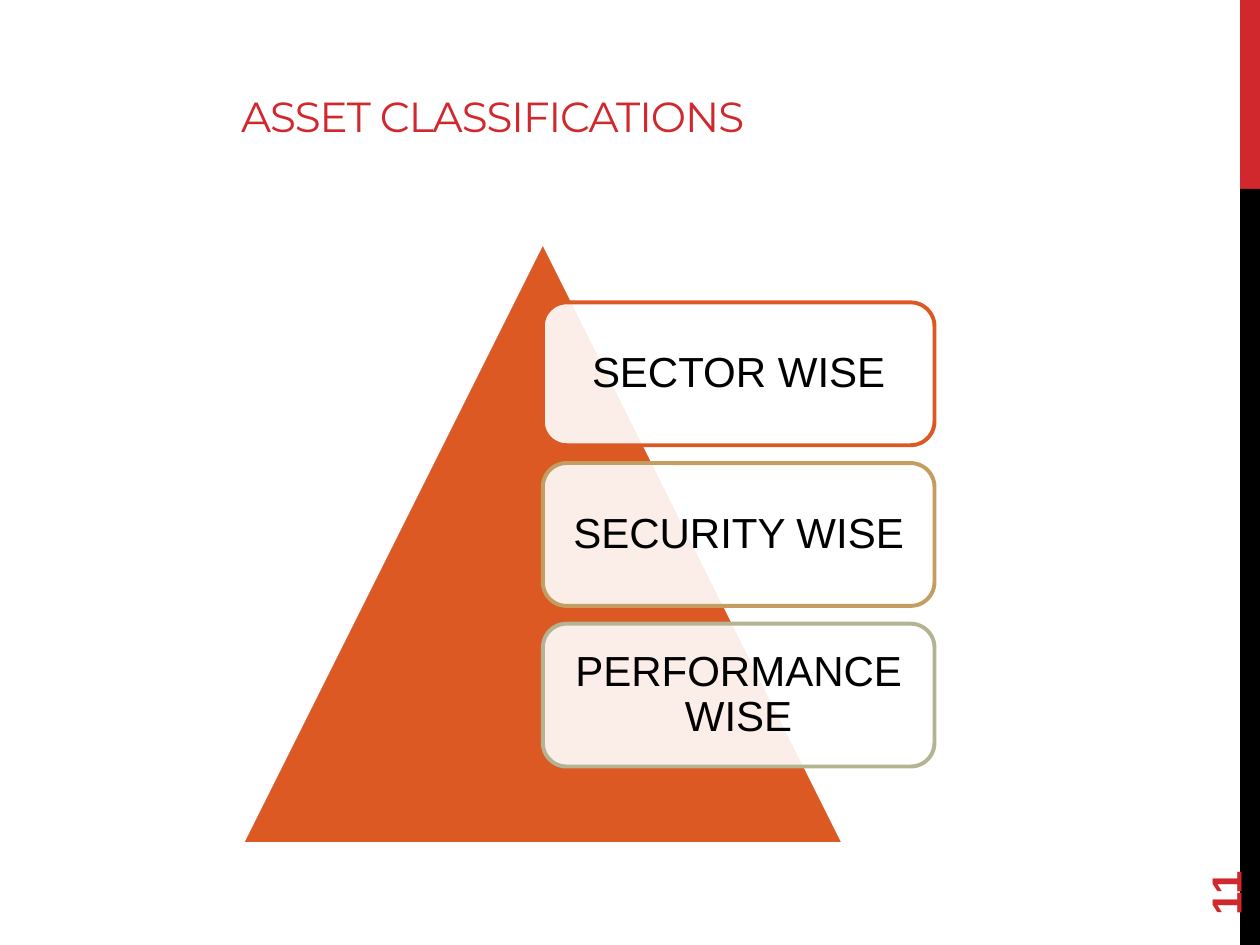
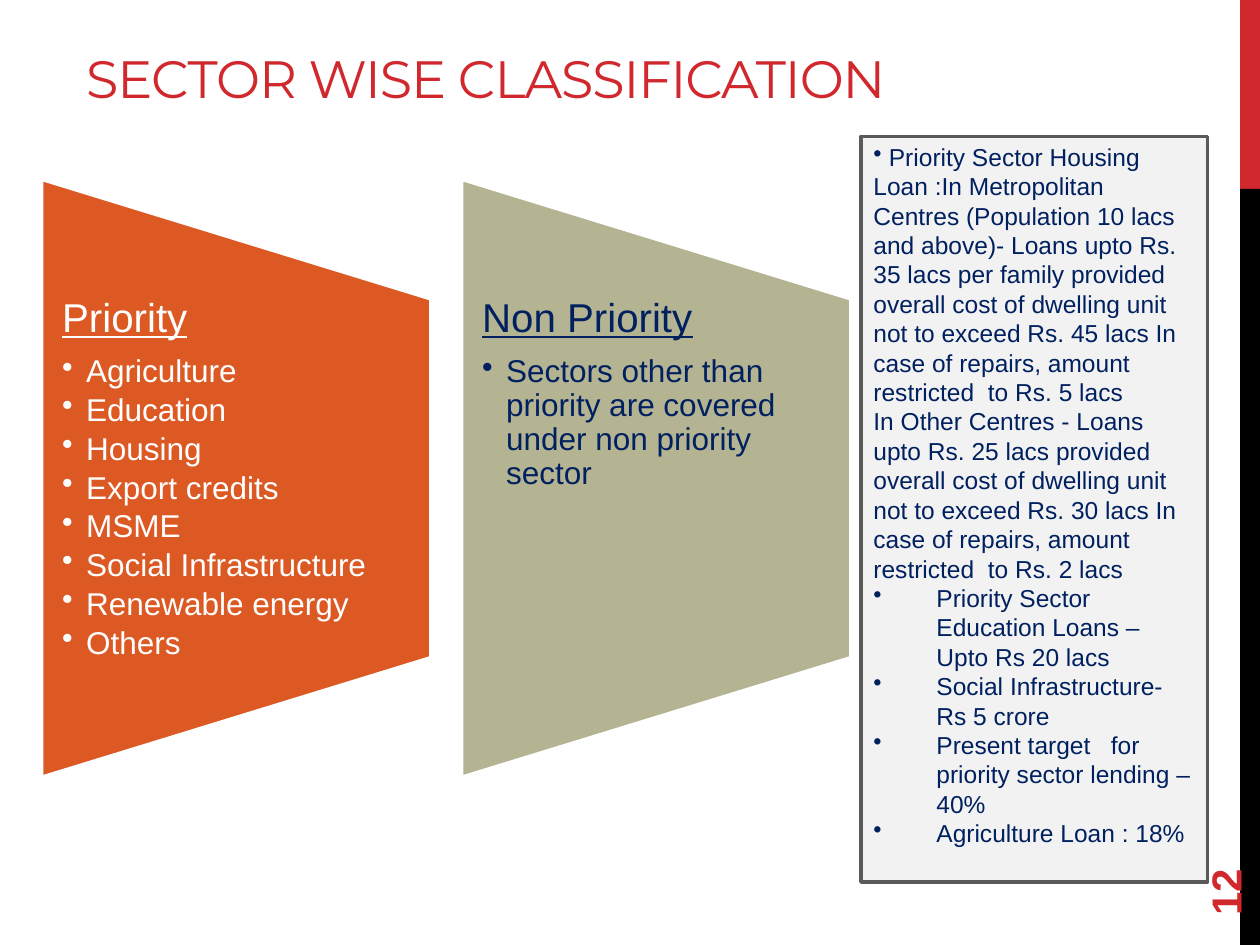
from dataclasses import dataclass

from lxml.etree import SubElement
from pptx import Presentation
from pptx.dml.color import RGBColor
from pptx.enum.shapes import MSO_SHAPE as Preset
from pptx.enum.text import MSO_ANCHOR as Anchor, MSO_AUTO_SIZE as AutoSize, PP_ALIGN as Align
from pptx.oxml.ns import qn
from pptx.util import Inches, Pt

RED = RGBColor(0xD1, 0x28, 0x2E)
BLACK = RGBColor(0x00, 0x00, 0x00)
WHITE = RGBColor(0xFF, 0xFF, 0xFF)
ORANGE = RGBColor(0xDC, 0x59, 0x24)
GOLD = RGBColor(0xC3, 0x9E, 0x60)
SAGE = RGBColor(0xB4, 0xB3, 0x92)
NAVY = RGBColor(0x00, 0x20, 0x60)
PALE = RGBColor(0xF2, 0xF2, 0xF2)
GREY = RGBColor(0x5A, 0x5A, 0x5A)

COLUMNS, ROWS = 60, 45
TITLE_ONLY = 5


@dataclass
class Line:
    text: str
    size: float
    color: RGBColor
    bold: bool = False
    underline: bool = False
    bullet: bool = False
    indent: float = 0
    level: int = 0
    spacing: float = 1
    after: float = 0
    align: Align = Align.LEFT


class Deck:
    title_font = "Montserrat"
    body_font = "Arial"
    outline = Pt(2.25)

    def __init__(self):
        self.presentation = Presentation()
        self.presentation.slide_width = Inches(10)
        self.presentation.slide_height = Inches(7.5)
        self.column = self.presentation.slide_width / COLUMNS
        self.row = self.presentation.slide_height / ROWS
        self.slide = None

    def place(self, left, top, width, height):
        return (round(left * self.column), round(top * self.row),
                round(width * self.column), round(height * self.row))

    def new_slide(self, title, area, size, number, inset=0.1):
        layout = self.presentation.slide_layouts[TITLE_ONLY]
        self.slide = self.presentation.slides.add_slide(layout)
        self.shape(Preset.RECTANGLE, (59.05, 0, 0.95, 9), RED)
        self.shape(Preset.RECTANGLE, (59.05, 9, 0.95, 36), BLACK)
        self.title(title, area, size, inset)
        self.text((54, 38.65, 8.65, 2.4), [Line(number, 24, RED, bold=True)],
                  anchor=Anchor.MIDDLE, rotation=270)

    def title(self, text, area, size, inset):
        shape = self.slide.shapes.title
        shape.left, shape.top, shape.width, shape.height = self.place(*area)
        frame = shape.text_frame
        frame.text = text
        frame.auto_size = AutoSize.NONE
        frame.vertical_anchor = Anchor.BOTTOM
        frame.margin_left = Inches(inset)
        paragraph = frame.paragraphs[0]
        paragraph.alignment = Align.LEFT
        run = paragraph.runs[0]
        run.font.name = self.title_font
        run.font.size = Pt(size)
        run.font.color.rgb = RED
        run._r.get_or_add_rPr().set("spc", "-60")

    def shape(self, preset, area, fill, line=None, rotation=0, opacity=100):
        shape = self.slide.shapes.add_shape(preset, *self.place(*area))
        shape.shadow.inherit = False
        shape.rotation = rotation
        shape.fill.solid()
        shape.fill.fore_color.rgb = fill
        if opacity < 100:
            color = shape._element.spPr.find(qn("a:solidFill"))[0]
            SubElement(color, qn("a:alpha")).set("val", str(opacity * 1000))
        if line is None:
            shape.line.fill.background()
        else:
            shape.line.color.rgb = line
            shape.line.width = self.outline
        return shape

    def text(self, area, lines, anchor=Anchor.TOP, rotation=0, insets=(0.1, 0.05, 0.1, 0.05)):
        box = self.slide.shapes.add_textbox(*self.place(*area))
        box.rotation = rotation
        self.set_lines(box, lines, anchor, insets)

    def set_lines(self, shape, lines, anchor=Anchor.MIDDLE, insets=(0.1, 0.05, 0.1, 0.05)):
        frame = shape.text_frame
        frame.word_wrap = True
        frame.vertical_anchor = anchor
        (frame.margin_left, frame.margin_top,
         frame.margin_right, frame.margin_bottom) = map(Inches, insets)
        for index, line in enumerate(lines):
            paragraph = frame.add_paragraph() if index else frame.paragraphs[0]
            self.style_line(paragraph, line)

    def style_line(self, paragraph, line):
        paragraph.text = line.text
        paragraph.alignment = line.align
        paragraph.level = line.level
        paragraph.line_spacing = line.spacing
        paragraph.space_after = Pt(line.after)
        font = paragraph.runs[0].font
        font.name = self.body_font
        font.size = Pt(line.size)
        font.bold = line.bold
        font.underline = line.underline
        font.color.rgb = line.color
        properties = paragraph._p.get_or_add_pPr()
        properties.set("marL", str(Inches(line.indent)))
        properties.set("indent", str(-Inches(line.indent)))
        if line.bullet:
            SubElement(properties, qn("a:buChar")).set("char", "•")


def asset_classifications(deck):
    deck.new_slide("ASSET CLASSIFICATIONS", (8, 1, 33, 6), 24, "11", inset=0.58)
    deck.shape(Preset.ISOSCELES_TRIANGLE, (11.5, 11.5, 28.7, 28.7), ORANGE, WHITE)
    classes = [("SECTOR WISE", ORANGE), ("SECURITY WISE", GOLD), ("PERFORMANCE WISE", SAGE)]
    for index, (name, color) in enumerate(classes):
        card = deck.shape(Preset.ROUNDED_RECTANGLE, (25.85, 14.4 + 7.65 * index, 18.65, 6.8),
                          WHITE, color, opacity=90)
        deck.set_lines(card, [Line(name, 24, BLACK, spacing=0.9, align=Align.CENTER)],
                       insets=(0.1, 0.1, 0.1, 0.1))


def sector_wise_classification(deck):
    deck.new_slide("SECTOR WISE CLASSIFICATION", (3.5, 1, 45, 4.5), 30, "12")
    sectors = [
        ("Priority", ORANGE, WHITE,
         ["Agriculture", "Education", "Housing", "Export credits", "MSME",
          "Social Infrastructure", "Renewable energy", "Others"]),
        ("Non Priority", SAGE, NAVY,
         ["Sectors other than priority are covered under non priority sector"]),
    ]
    for index, (heading, fill, color, members) in enumerate(sectors):
        shift = 20 * index
        deck.shape(Preset.FLOWCHART_MANUAL_OPERATION, (shift - 3, 13.5, 28.5, 18.55),
                   fill, WHITE, rotation=270)
        lines = [Line(heading, 23, color, underline=True, spacing=0.9, after=8)]
        lines += [Line(member, 18, color, bullet=True, indent=0.19, level=1,
                       spacing=0.9, after=2.7) for member in members]
        deck.text((shift + 2, 14.2, 18.55, 17.1), lines, insets=(0.16, 0, 0.16, 0))

    limits = deck.shape(Preset.RECTANGLE, (41, 6.5, 16.5, 35.5), PALE, GREY)
    housing = [
        Line(" Priority Sector Housing Loan :In Metropolitan Centres (Population 10 lacs "
             "and above)- Loans upto Rs. 35 lacs per family provided overall cost of "
             "dwelling unit not to exceed Rs. 45 lacs In case of repairs, amount "
             "restricted  to Rs. 5 lacs", 14, NAVY, bullet=True),
        Line("In Other Centres - Loans upto Rs. 25 lacs provided overall cost of dwelling "
             "unit not to exceed Rs. 30 lacs In case of repairs, amount restricted  to "
             "Rs. 2 lacs", 14, NAVY),
    ]
    others = [Line(text, 14, NAVY, bullet=True, indent=0.5) for text in (
        "Priority Sector Education Loans – Upto Rs 20 lacs",
        "Social Infrastructure- Rs 5 crore",
        "Present target   for priority sector lending – 40%",
        "Agriculture Loan : 18%",
    )]
    deck.set_lines(limits, housing + others, insets=(0.1, 0.05, 0.1, 0.28))


def main():
    deck = Deck()
    asset_classifications(deck)
    sector_wise_classification(deck)
    deck.presentation.save("out.pptx")


if __name__ == "__main__":
    main()
